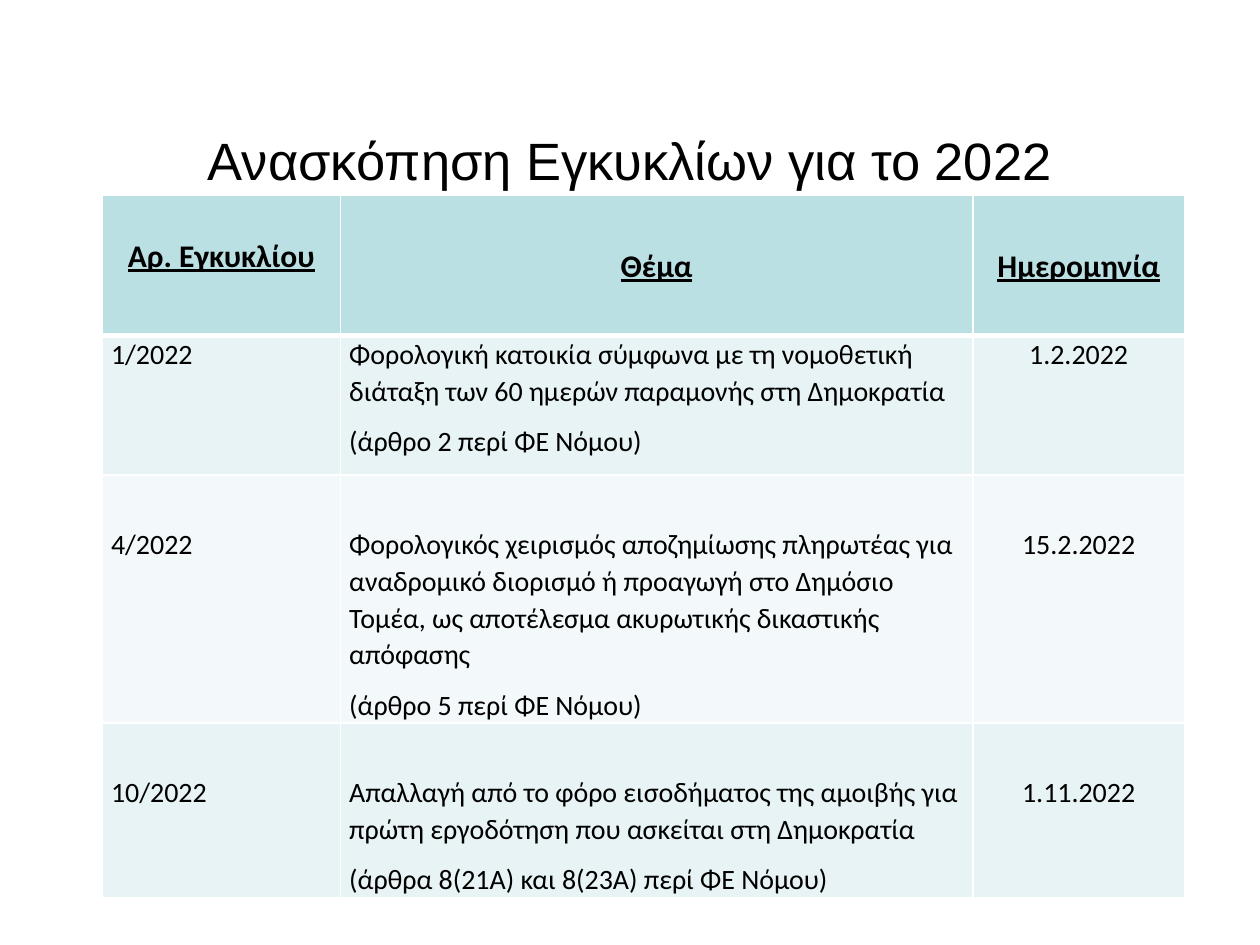
from dataclasses import dataclass

from lxml import etree
from pptx import Presentation
from pptx.dml.color import RGBColor
from pptx.enum.text import MSO_ANCHOR, PP_ALIGN
from pptx.oxml.ns import qn
from pptx.util import Cm, Pt

LEFT, CENTER = PP_ALIGN.LEFT, PP_ALIGN.CENTER
TOP, MIDDLE = MSO_ANCHOR.TOP, MSO_ANCHOR.MIDDLE
BLACK, WHITE = "000000", "FFFFFF"
HEADER_FILL, BAND_FILLS = "BBE0E3", ("E7F3F4", "F3F9FA")
COLUMN_WIDTHS = (4.8, 12.75, 4.27)
HEADER_HEIGHT = 2.82


@dataclass
class Circular:
    number: str
    subject: str
    article: str
    date: str
    height: float
    top_gap: float = 1.02


CIRCULARS = [
    Circular("1/2022",
             "Φορολογική κατοικία σύμφωνα με τη νομοθετική διάταξη των 60 ημερών "
             "παραμονής στη Δημοκρατία",
             "(άρθρο 2 περί ΦΕ Νόμου)", "1.2.2022", 2.82, 0),
    Circular("4/2022",
             "Φορολογικός χειρισμός αποζημίωσης πληρωτέας για αναδρομικό διορισμό "
             "ή προαγωγή στο Δημόσιο Τομέα, ως αποτέλεσμα ακυρωτικής δικαστικής απόφασης",
             "(άρθρο 5 περί ΦΕ Νόμου)", "15.2.2022", 4.94),
    Circular("10/2022",
             "Απαλλαγή από το φόρο εισοδήματος της αμοιβής για πρώτη εργοδότηση "
             "που ασκείται στη Δημοκρατία",
             "(άρθρα 8(21Α) και 8(23Α) περί ΦΕ Νόμου)", "1.11.2022", 3.46),
]


def rgb(color: str) -> RGBColor:
    return RGBColor.from_string(color)


def add_run(p, text: str, font: str, size: float, bold: bool = False) -> None:
    r = p.add_run()
    r.text = text
    r.font.name, r.font.size = font, Pt(size)
    r.font.bold = r.font.underline = bold
    r.font.color.rgb = rgb(BLACK)


def set_borders(cell, top: float = 1, bottom: float = 1) -> None:
    tc_pr = cell._tc.get_or_add_tcPr()
    widths = {"a:lnL": 1, "a:lnR": 1, "a:lnT": top, "a:lnB": bottom}
    for i, (tag, width) in enumerate(widths.items()):
        ln = etree.Element(qn(tag), w=str(Pt(width)))
        fill = etree.SubElement(ln, qn("a:solidFill"))
        etree.SubElement(fill, qn("a:srgbClr"), val=WHITE)
        tc_pr.insert(i, ln)


def fill_cell(cell, lines: list[str], fill: str, size: float, align=LEFT,
              anchor=TOP, top_gap: float = 0, bold: bool = False) -> None:
    cell.fill.solid()
    cell.fill.fore_color.rgb = rgb(fill)
    cell.margin_left = cell.margin_right = Cm(0.18)
    cell.margin_top, cell.margin_bottom = Cm(top_gap), 0
    cell.vertical_anchor = anchor
    tf = cell.text_frame
    for i, line in enumerate(lines):
        p = tf.add_paragraph() if i else tf.paragraphs[0]
        p.alignment, p.line_spacing, p.space_after = align, 1.07, Pt(8)
        add_run(p, line, "Calibri", size, bold)


def add_circulars_table(s) -> None:
    heights = [HEADER_HEIGHT] + [c.height for c in CIRCULARS]
    table = s.shapes.add_table(len(heights), len(COLUMN_WIDTHS), Cm(2.06), Cm(3.94),
                               Cm(sum(COLUMN_WIDTHS)), Cm(sum(heights))).table
    for column, width in zip(table.columns, COLUMN_WIDTHS):
        column.width = Cm(width)
    for row, height in zip(table.rows, heights):
        row.height = Cm(height)

    # Header row: the first heading sits higher than the other two
    headings = [("Αρ. Εγκυκλίου", TOP, 0.79), ("Θέμα", MIDDLE, 0),
                ("Ημερομηνία", MIDDLE, 0)]
    for col, (heading, anchor, gap) in enumerate(headings):
        cell = table.cell(0, col)
        fill_cell(cell, [heading], HEADER_FILL, 18, CENTER, anchor, gap, True)
        set_borders(cell, bottom=3)

    # One banded row per circular
    for row, c in enumerate(CIRCULARS, 1):
        columns = [([c.number], LEFT), ([c.subject, c.article], LEFT), ([c.date], CENTER)]
        for col, (lines, align) in enumerate(columns):
            cell = table.cell(row, col)
            fill_cell(cell, lines, BAND_FILLS[(row - 1) % 2], 16, align,
                      top_gap=c.top_gap)
            set_borders(cell, top=3 if row == 1 else 1)


def main() -> None:
    prs = Presentation()
    prs.slide_width, prs.slide_height = Cm(25.4), Cm(19.05)
    s = prs.slides.add_slide(prs.slide_layouts[5])

    # Title
    sp = s.shapes.title
    sp.left, sp.top, sp.width, sp.height = Cm(1.27), Cm(2.51), Cm(22.86), Cm(1.42)
    tf = sp.text_frame
    tf.vertical_anchor = MIDDLE
    p = tf.paragraphs[0]
    p.alignment = CENTER
    add_run(p, "Ανασκόπηση Εγκυκλίων για το 2022", "Arial", 30)

    add_circulars_table(s)
    prs.save("out.pptx")


if __name__ == "__main__":
    main()
